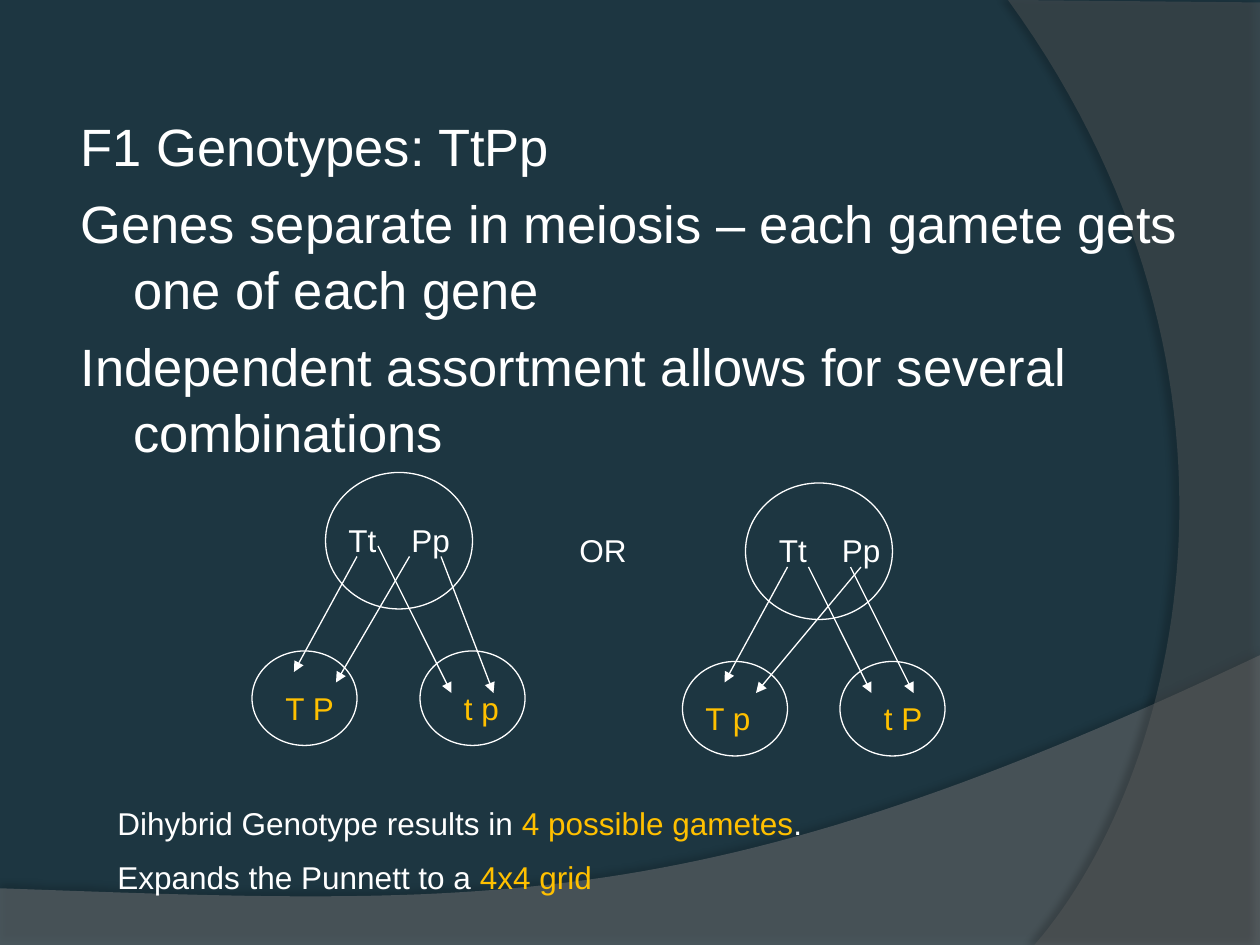
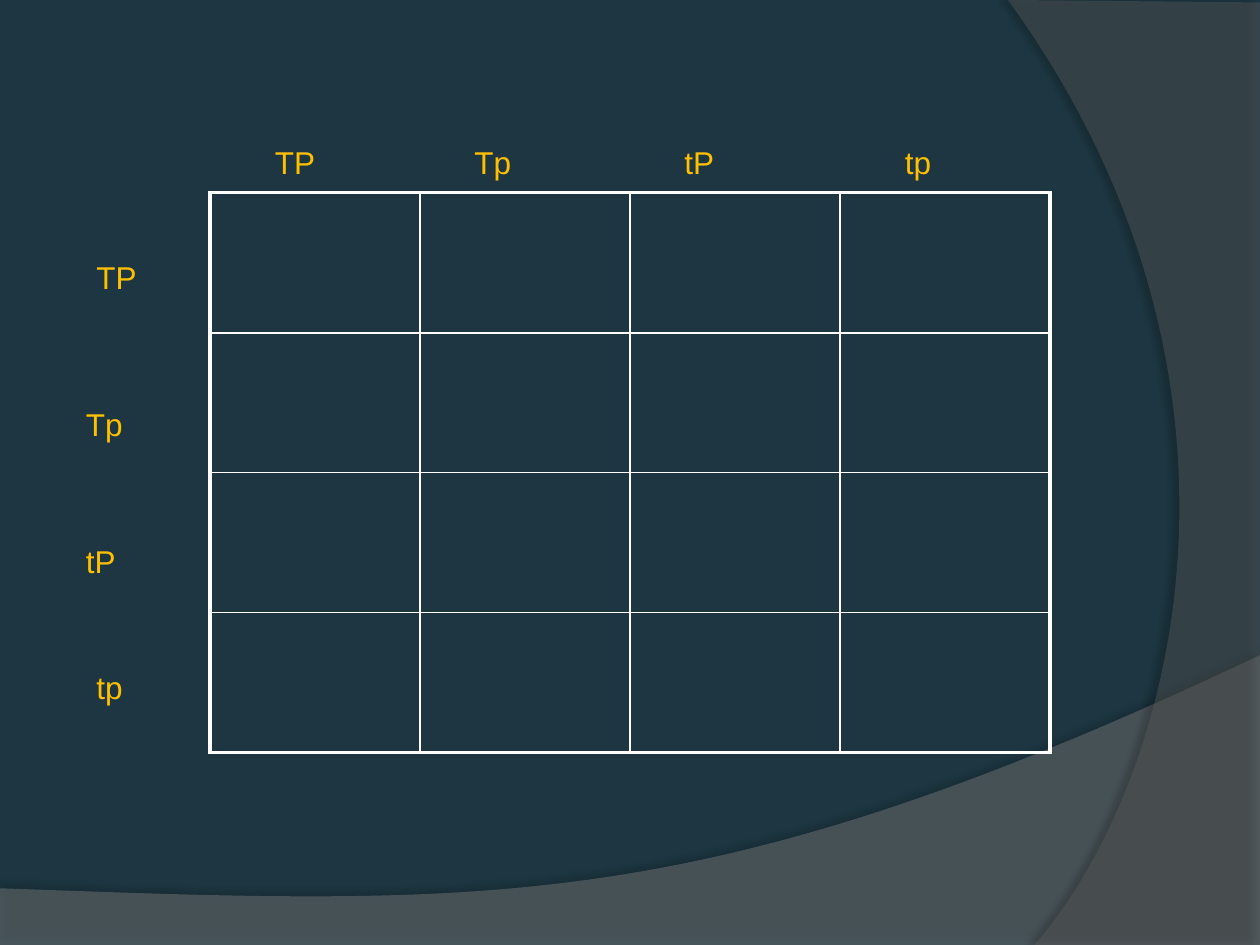
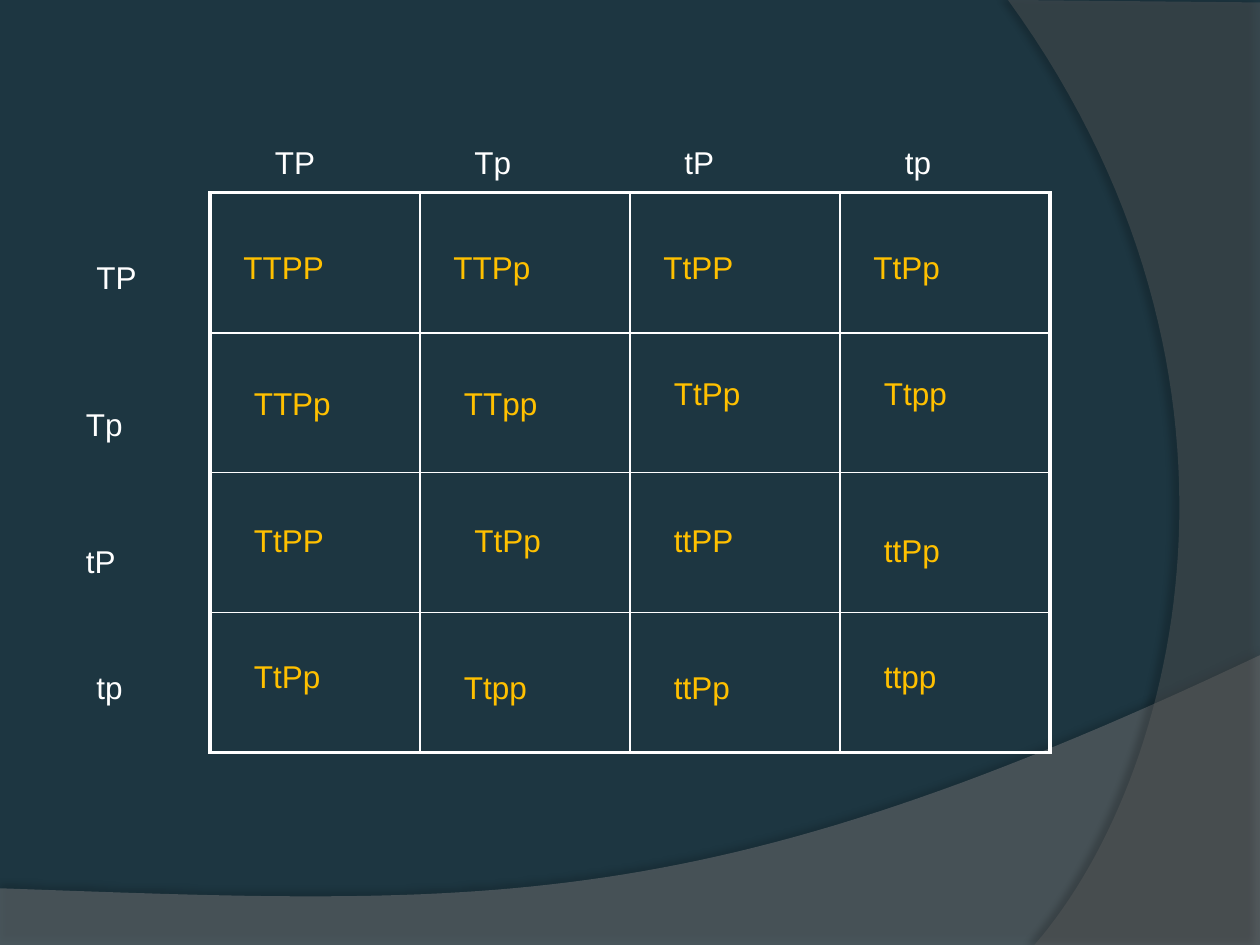
import dataclasses
import pptx
import pptx.dml.color
import pptx.enum.shapes
import pptx.enum.text
import pptx.oxml
import pptx.oxml.ns
import pptx.util


@dataclasses.dataclass(frozen=True)
class Theme:
    back: str = "1D3641"
    wave: str = "7F7F7F"
    arc: str = "5E5E5E"
    white: str = "FFFFFF"
    gold: str = "FFC000"
    font: str = "Arial"
    large: int = 30
    small: int = 18
    thin: float = 0.75
    rule: int = 1
    frame: float = 2.25


look = Theme()
rgb = pptx.dml.color.RGBColor.from_string
Pt = pptx.util.Pt
Inches = pptx.util.Inches
shapes = pptx.enum.shapes
space = pptx.oxml.ns.nsdecls("a")

deck = pptx.Presentation()
deck.slide_width = Inches(10)
deck.slide_height = Inches(7.5)
unit = deck.slide_width // 120


def add(parent, tag, inner=""):
    name = tag.split()[0]
    node = pptx.oxml.parse_xml(f"<a:{tag} {space}>{inner}</a:{name}>")
    parent.append(node)


def label(page, parts, col, row, wide, tall=4.8):
    box = page.shapes.add_textbox(col * unit, row * unit, wide * unit, int(tall * unit))
    frame = box.text_frame
    frame.word_wrap = True
    frame.auto_size = pptx.enum.text.MSO_AUTO_SIZE.SHAPE_TO_FIT_TEXT
    for num, line in enumerate(parts):
        para = frame.add_paragraph() if num else frame.paragraphs[0]
        para.space_before = Pt(look.small / 2)
        for text, tint in line:
            run = para.add_run()
            run.text = text
            run.font.name = look.font
            run.font.size = Pt(look.small)
            run.font.color.rgb = rgb(tint)
    return box


first = deck.slides.add_slide(deck.slide_layouts[1])
second, third = [deck.slides.add_slide(deck.slide_layouts[6]) for num in range(2)]

master = deck.slide_master
master.background.fill.solid()
master.background.fill.fore_color.rgb = rgb(look.back)
bands = [
    (look.wave, 45, 35, 3.5, 270,
     [(0, 7.51), (10, 7.51), (10, 5.2)], [(5.59, 7.29), (3.91, 7.19), (0, 7.05)]),
    (look.arc, 40, 45, 4, 180,
     [(10, 0.02), (10, 7.5), (8.21, 7.5)], [(9.35, 6.19), (10.18, 3), (8, 0)]),
]
steps = 60
for tint, alpha, dark, dist, angle, edge, bend in bands:
    curve = [edge[-1], *bend]
    dots = list(edge)
    for step in range(1, steps + 1):
        t = step / steps
        parts = ((1 - t) ** 3, 3 * t * (1 - t) ** 2, 3 * t * t * (1 - t), t ** 3)
        dots.append([sum(w * p[axis] for w, p in zip(parts, curve)) for axis in (0, 1)])
    dots = [(Inches(x), Inches(y)) for x, y in dots]
    pen = first.shapes.build_freeform(*dots[0], scale=1.0)
    pen.add_line_segments(dots[1:], close=True)
    band = pen.convert_to_shape()
    band.fill.solid()
    band.fill.fore_color.rgb = rgb(tint)
    band.line.fill.background()
    band.shadow.inherit = False
    props = band._element.spPr
    add(props.find(".//" + pptx.oxml.ns.qn("a:srgbClr")), f'alpha val="{alpha * 1000}"')
    add(props.find(pptx.oxml.ns.qn("a:effectLst")),
        f'outerShdw blurRad="{Pt(4)}" dist="{Pt(dist)}" dir="{angle * 60000}" rotWithShape="0"',
        f'<a:srgbClr val="000000"><a:alpha val="{dark * 1000}"/></a:srgbClr>')
    master.shapes._spTree.append(band._element)

title = first.shapes.title._element
title.getparent().remove(title)
body = first.placeholders[1]
body.left, body.top, body.width, body.height = [n * unit for n in (6, 10, 108, 77)]
body.text_frame.text = "\n".join([
    "F1 Genotypes: TtPp",
    "Genes separate in meiosis – each gamete gets one of each gene",
    "Independent assortment allows for several combinations",
])
for para in body.text_frame.paragraphs:
    para.line_spacing = 1.05
    para.space_before = Pt(look.large / 5)
    props = para._p.get_or_add_pPr()
    props.set("marL", str(Inches(0.46)))
    props.set("indent", str(Inches(-0.42)))
    add(props, "buNone")
    font = para.runs[0].font
    font.name = look.font
    font.size = Pt(look.large)
    font.color.rgb = rgb(look.white)

for col, row in ((32, 49), (73, 50)):
    pair = label(first, [[("Tt\tPp", look.white)]], col, row, 13)
    add(pair.text_frame.paragraphs[0]._p.pPr, "tabLst",
        f'<a:tab pos="{Inches(0.5)}" algn="l"/>')
label(first, [[("OR", look.white)]], 54, 50, 8)

cells = [(31, 45, 14, 13), (71, 46, 14, 13)]
cells += [(col, row, 10, 9) for col, row in ((24, 62), (40, 62), (65, 63), (80, 63))]
for place in cells:
    cell = first.shapes.add_shape(shapes.MSO_SHAPE.OVAL, *[n * unit for n in place])
    cell.fill.background()
    cell.line.color.rgb = rgb(look.white)
    cell.line.width = Pt(look.thin)
    cell.shadow.inherit = False

arrows = [
    (34, 53, 28, 64), (75, 54, 69, 65), (39, 53, 32, 65), (82, 54, 72, 66),
    (42, 53, 47, 66), (36, 52, 43, 66), (77, 54, 83, 66), (81, 54, 87, 66),
]
for ends in arrows:
    arrow = first.shapes.add_connector(
        shapes.MSO_CONNECTOR.STRAIGHT, *[n * unit for n in ends])
    arrow.line.color.rgb = rgb(look.white)
    arrow.line.width = Pt(look.thin)
    add(arrow.line._get_or_add_ln(), 'tailEnd type="triangle"')
    add(arrow._element.spPr, "effectLst")

for text, col, row in (("T P", 26, 65), ("t p", 43, 65), ("T p", 66, 66), ("t P", 83, 66)):
    label(first, [[(text, look.gold)]], col, row, 8)
label(first, [
    [("Dihybrid Genotype results in ", look.white), ("4 possible gametes", look.gold),
     (".", look.white)],
    [("Expands the Punnett to a ", look.white), ("4x4 grid", look.gold)],
], 10, 76, 99, 10.2)

genes = ["TP", "Tp", "tP", "tp"]
heads = [(25, 13), (44, 13), (64, 13), (85, 13)]
sides = [(8, 24), (7, 38), (7, 51), (8, 63)]
count = len(genes)
for page, tint in ((second, look.gold), (third, look.white)):
    grid = page.shapes.add_table(
        count, count, 20 * unit, Inches(1.53), 80 * unit, 160 * unit // 3).table
    grid.first_row = False
    grid.horz_banding = False
    for row in range(count):
        for col in range(count):
            cell = grid.cell(row, col)
            props = cell._tc.get_or_add_tcPr()
            outer = {"L": col == 0, "R": col == count - 1,
                     "T": row == 0, "B": row == count - 1}
            for side, edge in outer.items():
                width = Pt(look.frame if edge else look.rule)
                add(props, f'ln{side} w="{width}"',
                    f'<a:solidFill><a:srgbClr val="{look.white}"/></a:solidFill>')
            cell.fill.background()
    for spots in (heads, sides):
        for gene, (col, row) in zip(genes, spots):
            label(page, [[(gene, tint)]], col, row, 10)

nudge = [
    [(0, 0), (0, 0), (0, 0), (0, 0)],
    [(1, 0), (1, 0), (1, -1), (1, -1)],
    [(1, 0), (2, 0), (1, 0), (1, 1)],
    [(1, 0), (1, 1), (1, 1), (1, 0)],
]
for row, side in enumerate(genes):
    for col, head in enumerate(genes):
        cross = "".join("".join(sorted(pair)) for pair in zip(side, head))
        right, down = nudge[row][col]
        label(third, [[(cross, look.gold)]],
              22 + 20 * col + right, 23 + 13 * row + down, 13)

deck.save("out.pptx")
